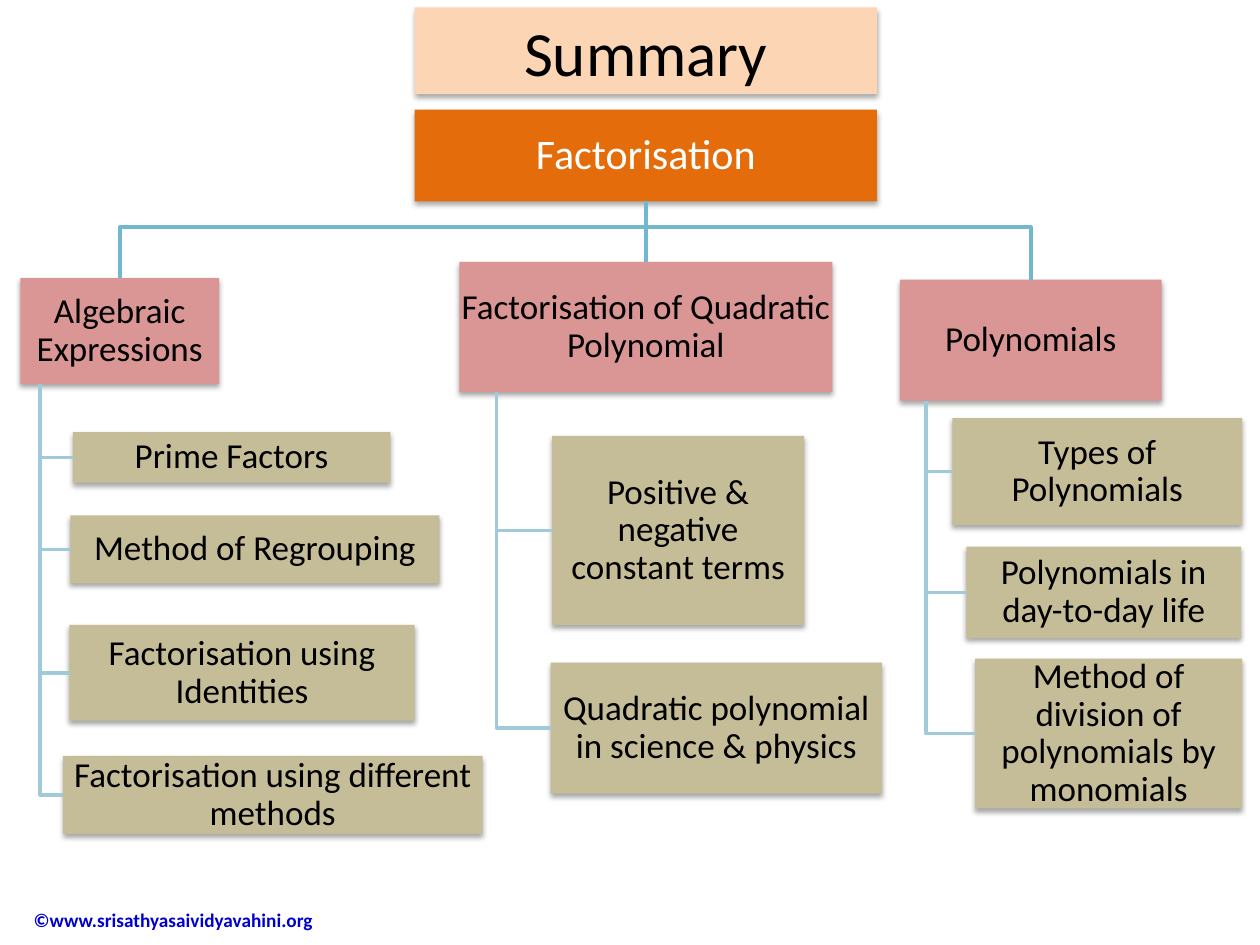
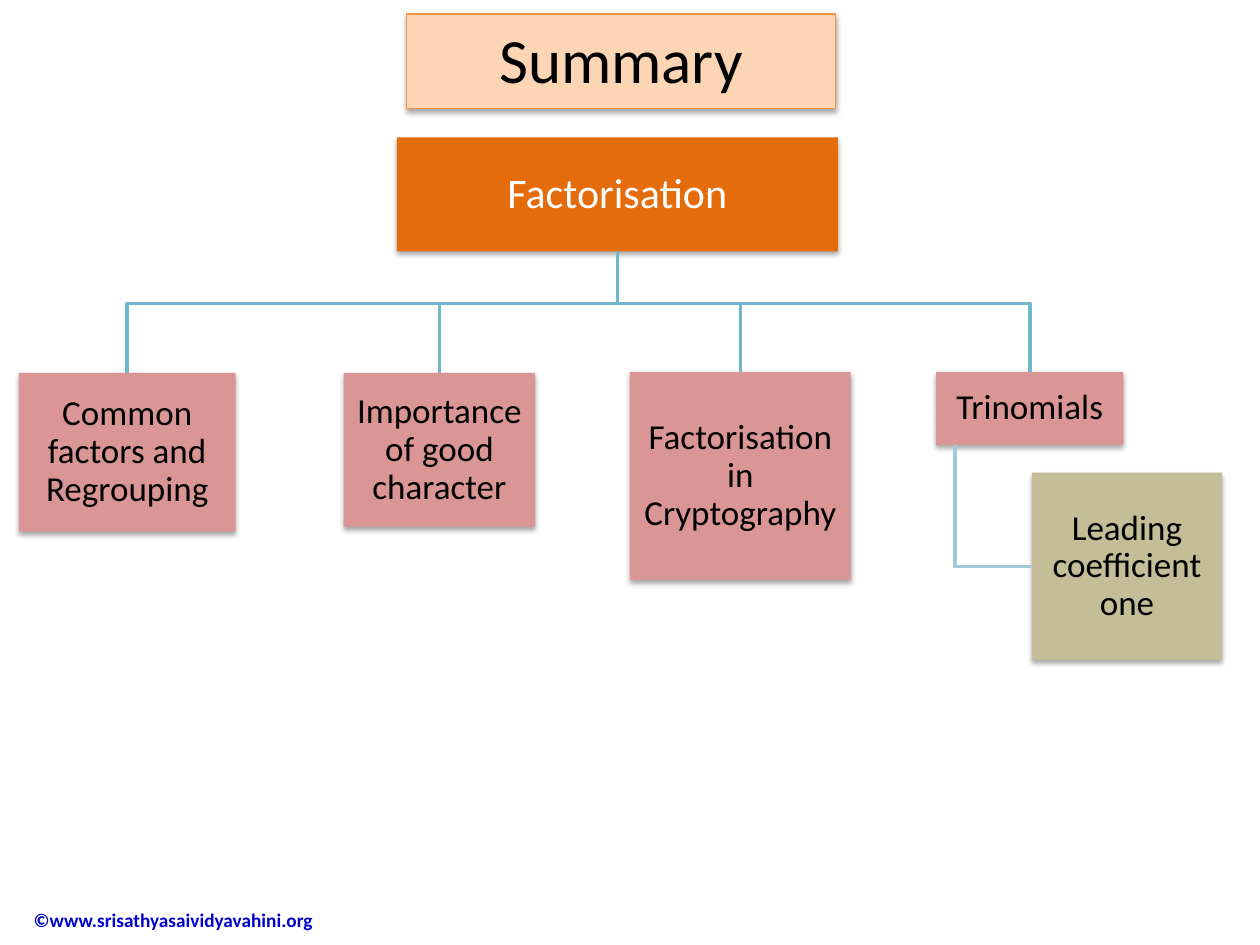
from lxml.etree import SubElement
from pptx import Presentation
from pptx.dml.color import RGBColor
from pptx.enum.shapes import MSO_CONNECTOR, MSO_SHAPE
from pptx.enum.text import MSO_ANCHOR, MSO_AUTO_SIZE, PP_ALIGN
from pptx.oxml.ns import qn
from pptx.util import Cm, Pt

FONT = "Calibri"
BLACK = RGBColor(0x00, 0x00, 0x00)
WHITE = RGBColor(0xFF, 0xFF, 0xFF)
PEACH = RGBColor(0xFC, 0xD5, 0xB5)
TITLE_OUTLINE = RGBColor(0xF6, 0x92, 0x40)
ORANGE = RGBColor(0xE4, 0x6C, 0x0A)
ROSE = RGBColor(0xD9, 0x96, 0x94)
KHAKI = RGBColor(0xC4, 0xBD, 0x97)
BRANCH_LINE = RGBColor(0x71, 0xB7, 0xCD)
TOPIC_LINE = RGBColor(0xA0, 0xCA, 0xD9)
FOOTER_BLUE = RGBColor(0x00, 0x00, 0xCC)

# Boxes are (left, top, width, height) in centimetres.
SUMMARIES = [
    {
        "title": (8.36, 0.15, 9.32, 1.75),
        "outline": None,
        "root": (8.36, 2.21, 9.32, 1.85),
        "bus": 4.58,
        "branches": [
            ("Algebraic Expressions", (0.41, 5.61, 4.01, 2.13), [
                ("Prime Factors", (1.47, 8.71, 6.4, 1.02)),
                ("Method of Regrouping", (1.42, 10.39, 7.44, 1.37)),
                ("Factorisation using Identities", (1.4, 12.6, 6.96, 1.93)),
                ("Factorisation using different methods", (1.27, 15.24, 8.46, 1.57)),
            ]),
            ("Factorisation of Quadratic Polynomial", (9.26, 5.28, 7.52, 2.62), [
                ("Positive & negative constant terms", (11.13, 8.79, 5.08, 3.81)),
                ("Quadratic polynomial in science & physics", (11.1, 13.36, 6.68, 2.64)),
            ]),
            ("Polynomials", (18.14, 5.64, 5.28, 2.44), [
                ("Types of Polynomials", (19.2, 8.43, 5.84, 2.16)),
                ("Polynomials in day-to-day life", (19.48, 11.02, 5.54, 1.85)),
                ("Method of division of polynomials by monomials",
                 (19.66, 13.28, 5.38, 3.02)),
            ]),
        ],
    },
    {
        "title": (8.2, 0.28, 8.64, 1.91),
        "outline": TITLE_OUTLINE,
        "root": (8, 2.77, 8.89, 2.3),
        "bus": 6.12,
        "branches": [
            ("Common factors and Regrouping", (0.38, 7.52, 4.37, 3.2), []),
            ("Importance of good character", (6.93, 7.52, 3.86, 3.1), []),
            ("Factorisation in Cryptography", (12.7, 7.5, 4.45, 4.19), []),
            ("Trinomials", (18.87, 7.5, 3.78, 1.47), [
                ("Leading coefficient one", (20.8, 9.53, 3.84, 3.78)),
            ]),
        ],
    },
]


class SummaryDeck:
    def __init__(self):
        self.presentation = Presentation()
        self.presentation.slide_width = Cm(25.4)
        self.presentation.slide_height = Cm(19.05)
        self.slide = None

    def add_slide(self):
        self.slide = self.presentation.slides.add_slide(
            self.presentation.slide_layouts[5])

    def set_text(self, shape, text, size, color, bold=False, alignment=PP_ALIGN.CENTER):
        shape.text_frame.word_wrap = True
        paragraph = shape.text_frame.paragraphs[0]
        paragraph.text = text
        paragraph.alignment = alignment
        paragraph.font.name = FONT
        paragraph.font.size = Pt(size)
        paragraph.font.bold = bold
        paragraph.font.color.rgb = color
        return paragraph

    def paint(self, shape, fill, outline=None):
        """Fill a shape and give it the soft shadow that all panels share."""
        shape.fill.solid()
        shape.fill.fore_color.rgb = fill
        if outline is None:
            shape.line.fill.background()
        else:
            shape.line.color.rgb = outline
            shape.line.width = Pt(0.75)
        shape.shadow.inherit = False
        effects = shape.element.spPr.find(qn("a:effectLst"))
        shadow = SubElement(effects, qn("a:outerShdw"), blurRad=str(Pt(3.1)),
                            dist=str(Pt(1.8)), dir="5400000", rotWithShape="0")
        color = SubElement(shadow, qn("a:srgbClr"), val="000000")
        SubElement(color, qn("a:alpha"), val="35000")

    def title(self, text, box, outline):
        title = self.slide.shapes.title
        title.left, title.top, title.width, title.height = map(Cm, box)
        self.paint(title, PEACH, outline)
        title.text_frame.auto_size = MSO_AUTO_SIZE.NONE
        title.text_frame.vertical_anchor = MSO_ANCHOR.TOP
        self.set_text(title, text, 36, BLACK)

    def panel(self, text, box, fill, size=20, color=BLACK):
        panel = self.slide.shapes.add_shape(MSO_SHAPE.RECTANGLE, *map(Cm, box))
        self.paint(panel, fill)
        frame = panel.text_frame
        frame.margin_left = frame.margin_right = Cm(0.03)
        frame.margin_top = frame.margin_bottom = Cm(0.03)
        frame.vertical_anchor = MSO_ANCHOR.MIDDLE
        self.set_text(panel, text, size, color).line_spacing = 0.9
        return panel

    def style_line(self, line, color):
        line.color.rgb = color
        line.width = Pt(2)

    def bent_line(self, points, color):
        builder = self.slide.shapes.build_freeform(*points[0])
        builder.add_line_segments(points[1:], close=False)
        shape = builder.convert_to_shape()
        shape.fill.background()
        shape.shadow.inherit = False
        self.style_line(shape.line, color)

    def straight_line(self, parent, child, color):
        connector = self.slide.shapes.add_connector(MSO_CONNECTOR.STRAIGHT, 0, 0, 0, 0)
        connector.begin_connect(parent, 2)
        connector.end_connect(child, 0)
        self.style_line(connector.line, color)
        SubElement(connector.element.spPr, qn("a:effectLst"))

    def link_branch(self, root, branch, bus):
        """Join the root to a branch by way of the horizontal bus."""
        start = root.left + root.width // 2
        end = branch.left + branch.width // 2
        if abs(start - end) < Cm(0.02):
            self.straight_line(root, branch, BRANCH_LINE)
        else:
            self.bent_line([(start, root.top + root.height), (start, bus),
                            (end, bus), (end, branch.top)], BRANCH_LINE)

    def link_topic(self, branch, topic):
        """Drop from a tenth of the branch's width to the topic's left side."""
        stem = branch.left + branch.width // 10
        middle = topic.top + topic.height // 2
        self.bent_line([(stem, branch.top + branch.height), (stem, middle),
                        (topic.left, middle)], TOPIC_LINE)

    def footer(self, text):
        footer = self.slide.shapes.add_textbox(Cm(0.43), Cm(18.03), Cm(6.4), Cm(1.02))
        footer.text_frame.vertical_anchor = MSO_ANCHOR.MIDDLE
        self.set_text(footer, text, 11, FOOTER_BLUE, bold=True, alignment=PP_ALIGN.LEFT)

    def summary(self, title, outline, root, bus, branches):
        self.add_slide()
        self.footer("©www.srisathyasaividyavahini.org")
        self.title("Summary", title, outline)
        root_panel = self.panel("Factorisation", root, ORANGE, 24, WHITE)
        for branch_text, branch_box, topics in branches:
            branch = self.panel(branch_text, branch_box, ROSE)
            self.link_branch(root_panel, branch, Cm(bus))
            for topic_text, topic_box in topics:
                topic = self.panel(topic_text, topic_box, KHAKI)
                self.link_topic(branch, topic)


def main():
    deck = SummaryDeck()
    for summary in SUMMARIES:
        deck.summary(**summary)
    deck.presentation.save("out.pptx")


if __name__ == "__main__":
    main()
